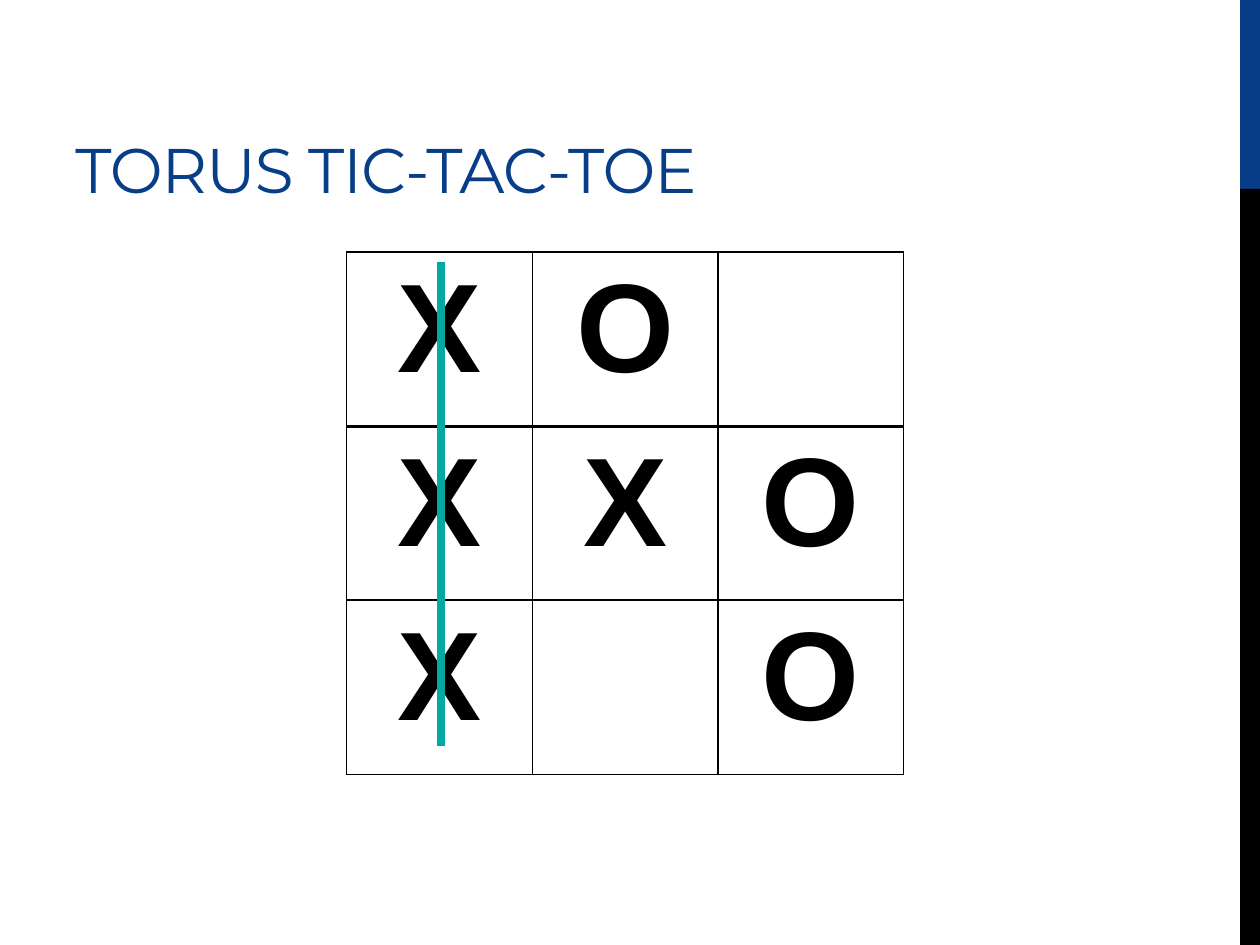
from dataclasses import dataclass

import lxml.etree
import pptx
import pptx.dml.color
import pptx.enum.shapes
import pptx.enum.text
import pptx.oxml.ns
import pptx.slide
import pptx.table
import pptx.util
from pptx.util import Cm, Pt

BLUE = pptx.dml.color.RGBColor(0x07, 0x3E, 0x87)
BLACK = pptx.dml.color.RGBColor(0x00, 0x00, 0x00)
WHITE = pptx.dml.color.RGBColor(0xFF, 0xFF, 0xFF)
TEAL = pptx.dml.color.RGBColor(0x04, 0xA8, 0xA4)

BOARD = ["XO ", "XXO", "X O"]
COLUMN_WIDTH = Cm(3.74)
ROW_HEIGHT = Cm(3.51)


@dataclass(frozen=True)
class SideBar:
    top: pptx.util.Length
    height: pptx.util.Length
    color: pptx.dml.color.RGBColor


SIDE_BARS = [
    SideBar(Cm(0), Cm(3.81), BLUE),
    SideBar(Cm(3.81), Cm(15.24), BLACK),
]


def add_side_bar(slide: pptx.slide.Slide, bar: SideBar) -> None:
    shape = slide.shapes.add_shape(
        pptx.enum.shapes.MSO_SHAPE.RECTANGLE, Cm(25), bar.top, Cm(0.4), bar.height
    )
    shape.shadow.inherit = False
    shape.fill.solid()
    shape.fill.fore_color.rgb = bar.color
    shape.line.fill.background()


def add_title(slide: pptx.slide.Slide, text: str) -> None:
    box = slide.shapes.add_textbox(Cm(1.27), Cm(0.43), Cm(16.08), Cm(3.81))
    frame = box.text_frame
    frame.word_wrap = True
    frame.vertical_anchor = pptx.enum.text.MSO_ANCHOR.BOTTOM
    frame.margin_bottom = Cm(0.08)
    frame.text = text
    run = frame.paragraphs[0].runs[0]
    run.font.name = "Montserrat"
    run.font.size = Pt(36)
    run.font.color.rgb = BLUE
    run.font._element.set("spc", "-60")


def set_border(cell: pptx.table._Cell, side: str, width: pptx.util.Length) -> None:
    """Draw one side (L, R, T or B) of a cell; call in that order, before the fill."""
    qn = pptx.oxml.ns.qn
    properties = cell._tc.get_or_add_tcPr()
    line = lxml.etree.SubElement(properties, qn(f"a:ln{side}"), w=str(int(width)))
    fill = lxml.etree.SubElement(line, qn("a:solidFill"))
    lxml.etree.SubElement(fill, qn("a:srgbClr"), val=str(BLACK))


def format_cell(cell: pptx.table._Cell, mark: str, row: int) -> None:
    thick_side = {0: "B", 1: "T"}.get(row)
    for side in "LRTB":
        set_border(cell, side, Pt(2) if side == thick_side else Pt(1))
    if row == 0:
        cell.fill.background()
    else:
        cell.fill.solid()
        cell.fill.fore_color.rgb = WHITE
    if mark == " ":
        return
    cell.text_frame.text = mark
    paragraph = cell.text_frame.paragraphs[0]
    paragraph.alignment = pptx.enum.text.PP_ALIGN.CENTER
    font = paragraph.runs[0].font
    font.name = "Arial"
    font.size = Pt(72)
    font.bold = True
    font.color.rgb = BLACK


def add_board(slide: pptx.slide.Slide, board: list[str]) -> None:
    rows, columns = len(board), len(board[0])
    table = slide.shapes.add_table(
        rows, columns, Cm(6.99), Cm(5.08), COLUMN_WIDTH * columns, ROW_HEIGHT * rows
    ).table
    table.first_row = False
    table.horz_banding = False
    for row, marks in enumerate(board):
        for column, mark in enumerate(marks):
            format_cell(table.cell(row, column), mark, row)


def add_winning_line(slide: pptx.slide.Slide) -> None:
    line = slide.shapes.add_connector(
        pptx.enum.shapes.MSO_CONNECTOR.STRAIGHT, Cm(8.89), Cm(5.28), Cm(8.89), Cm(15.04)
    )
    line.line.color.rgb = TEAL
    line.line.width = Pt(4.5)
    lxml.etree.SubElement(line._element.spPr, pptx.oxml.ns.qn("a:effectLst"))


def main() -> None:
    presentation = pptx.Presentation()
    presentation.slide_width = Cm(25.4)
    presentation.slide_height = Cm(19.05)
    slide = presentation.slides.add_slide(presentation.slide_layouts[6])
    for bar in SIDE_BARS:
        add_side_bar(slide, bar)
    add_board(slide, BOARD)
    add_title(slide, "TORUS TIC-TAC-TOE")
    add_winning_line(slide)
    presentation.save("out.pptx")


if __name__ == "__main__":
    main()
